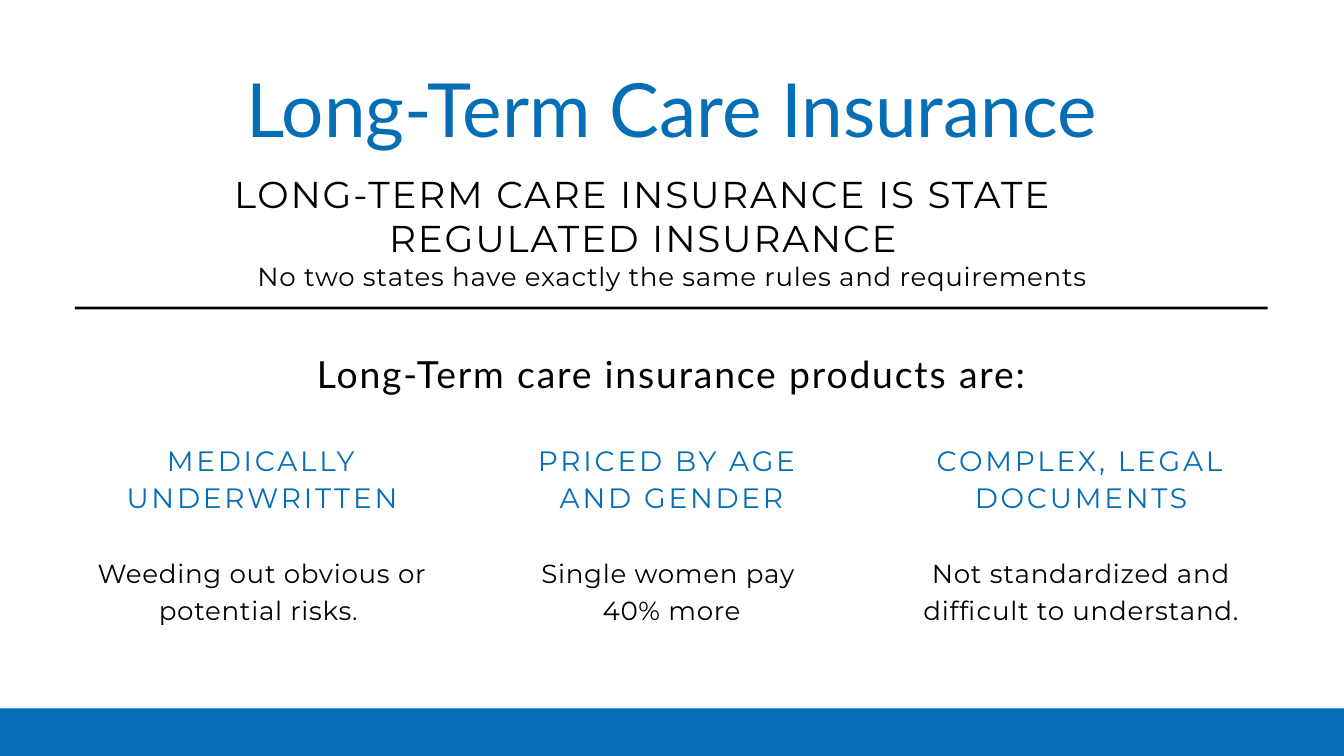
import pptx
import pptx.dml.color
import pptx.enum.shapes
import pptx.enum.text
import pptx.util

PX = 9525
WIDTH, HEIGHT = 1920, 1080
BLUE, BLACK, RULE = "056EB5", "000000", "050707"

STYLES = {
    "title": dict(font="Lato", size=80, color=BLUE, leading=88, tracking=0),
    "subtitle": dict(font="Montserrat", size=40, color=BLACK, leading=48, tracking=2),
    "intro": dict(font="Lato", size=40, color=BLACK, leading=48, tracking=2),
    "heading": dict(font="Montserrat", size=30, color=BLUE, leading=39, tracking=3),
    "body": dict(font="Montserrat", size=28, color=BLACK, leading=39.2, tracking=0.8),
}

TITLE = ("Long-Term Care Insurance", (206, 100, 1507, 120))
CENTRED_TEXTS = [
    ("subtitle", "LONG-TERM CARE INSURANCE IS STATE REGULATED INSURANCE", (322, 244, 1194, 127)),
    ("body", "No two states have exactly the same rules and requirements", (322, 365, 1277, 49)),
    ("intro", "Long-Term care insurance products are:", (268, 502, 1383, 63)),
]
COLUMNS = [
    ("MEDICALLY UNDERWRITTEN", "Weeding out obvious or potential risks. "),
    ("PRICED BY AGE \nAND GENDER", "Single women pay \n40% more"),
    ("COMPLEX, LEGAL DOCUMENTS", "Not standardized and difficult to understand."),
]
COLUMN_LEFT, COLUMN_WIDTH, COLUMN_STEP = 107, 535, 585
HEADING_TOP, BODY_TOP, COLUMN_TEXT_HEIGHT = 630, 789, 101
BARS = [(RULE, (107, 438, 1704, 4)), (BLUE, (0, 1012, WIDTH, 68))]


def rgb(color):
    return pptx.dml.color.RGBColor.from_string(color)


def emu(box):
    return [pptx.util.Emu(value * PX) for value in box]


def write(shape, text, style):
    frame = shape.text_frame
    frame.word_wrap = True
    frame.auto_size = pptx.enum.text.MSO_AUTO_SIZE.NONE
    frame.vertical_anchor = pptx.enum.text.MSO_ANCHOR.TOP
    frame.margin_left = frame.margin_top = frame.margin_right = frame.margin_bottom = 0
    frame.text = text
    look = STYLES[style]
    for paragraph in frame.paragraphs:
        paragraph.alignment = pptx.enum.text.PP_ALIGN.CENTER
        paragraph.line_spacing = pptx.util.Pt(look["leading"])
        paragraph.space_before = pptx.util.Pt(0)
        paragraph.font.name = look["font"]
        paragraph.font.size = pptx.util.Pt(look["size"])
        paragraph.font.color.rgb = rgb(look["color"])
        for properties in paragraph._p.xpath("a:pPr/a:defRPr"):
            properties.set("spc", str(round(look["tracking"] * 100)))


def add_text(slide, text, style, box):
    write(slide.shapes.add_textbox(*emu(box)), text, style)


def add_bar(slide, color, box):
    shape = slide.shapes.add_shape(pptx.enum.shapes.MSO_SHAPE.RECTANGLE, *emu(box))
    shape.shadow.inherit = False
    shape.fill.solid()
    shape.fill.fore_color.rgb = rgb(color)
    shape.line.fill.background()


def main():
    presentation = pptx.Presentation()
    presentation.slide_width, presentation.slide_height = emu((WIDTH, HEIGHT))
    slide = presentation.slides.add_slide(presentation.slide_layouts[5])

    text, box = TITLE
    title = slide.shapes.title
    title.left, title.top, title.width, title.height = emu(box)
    write(title, text, "title")

    for color, box in BARS:
        add_bar(slide, color, box)
    for style, text, box in CENTRED_TEXTS:
        add_text(slide, text, style, box)
    for index, (heading, body) in enumerate(COLUMNS):
        left = COLUMN_LEFT + index * COLUMN_STEP
        for text, style, top in ((heading, "heading", HEADING_TOP), (body, "body", BODY_TOP)):
            add_text(slide, text, style, (left, top, COLUMN_WIDTH, COLUMN_TEXT_HEIGHT))

    presentation.save("out.pptx")


if __name__ == "__main__":
    main()
